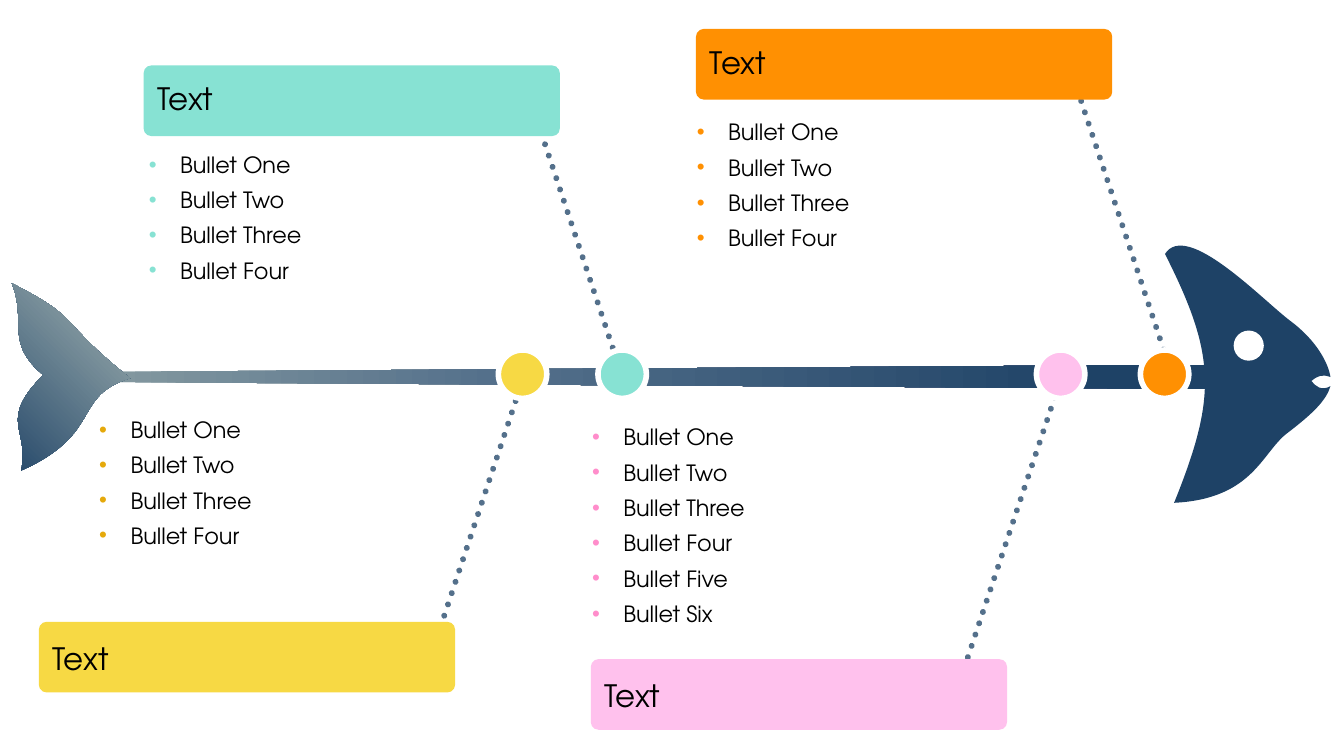
from math import cos, radians, sin

from copy import deepcopy
from lxml import etree
from pptx import Presentation
from pptx import util as u
from pptx.dml.color import RGBColor
from pptx.enum import dml, shapes, text
from pptx.oxml.ns import qn

FONT = "TeX Gyre Adventor"
NAVY, STEEL, GREY, WHITE = "1E4266", "54708B", "8499A0", "FFFFFF"
BANNER_W, BANNER_H = 10.49, 1.78
JOINT = 1.22
SEGMENT_TAGS = {2: "a:lnTo", 6: "a:cubicBezTo"}

prs = Presentation()
prs.slide_width, prs.slide_height = u.Cm(33.87), u.Cm(19.05)
slide = prs.slides.add_slide(prs.slide_layouts[6])
canvas = slide.shapes


def paint(shape, stops, angle=0, outline=None):
    """Fill with one hex colour, or with a gradient of (position, hex) stops."""
    shape.shadow.inherit = False
    if isinstance(stops, str):
        shape.fill.solid()
        shape.fill.fore_color.rgb = RGBColor.from_string(stops)
    else:
        shape.fill.gradient()
        shape.fill.gradient_angle = angle
        stop_list = shape._element.spPr.find(".//" + qn("a:gsLst"))
        while len(stop_list) < len(stops):
            stop_list.append(deepcopy(stop_list[0]))
        for stop, (position, color) in zip(shape.fill.gradient_stops, stops):
            stop.position = position
            stop.color.rgb = RGBColor.from_string(color)
    if outline:
        shape.line.color.rgb = RGBColor.from_string(outline)
        shape.line.width = u.Pt(4)
    else:
        shape.line.fill.background()


def write(lines, x, y, w, h, size, inset=None, bullet=None, after=0,
          anchor=text.MSO_ANCHOR.TOP):
    box = canvas.add_textbox(u.Cm(x), u.Cm(y), u.Cm(w), u.Cm(h))
    frame = box.text_frame
    frame.word_wrap = True
    frame.auto_size = text.MSO_AUTO_SIZE.SHAPE_TO_FIT_TEXT
    frame.vertical_anchor = anchor
    if inset is not None:
        frame.margin_left = frame.margin_right = u.Cm(inset)
        frame.margin_top = frame.margin_bottom = u.Cm(inset)
    frame.text = "\n".join(lines)
    for paragraph in frame.paragraphs:
        if bullet:
            props = paragraph._p.get_or_add_pPr()
            props.set("marL", str(u.Cm(0.79)))
            props.set("indent", str(-u.Cm(0.79)))
            color = etree.SubElement(props, qn("a:buClr"))
            etree.SubElement(color, qn("a:srgbClr"), val=bullet)
            etree.SubElement(props, qn("a:buFont"), typeface="Arial")
            etree.SubElement(props, qn("a:buChar"), char="•")
            paragraph.space_after = u.Pt(after)
        for run in paragraph.runs:
            run.font.name = FONT
            run.font.size = u.Pt(size)
            run.font.color.rgb = RGBColor.from_string("000000")


# Dotted ribs
for x1, y1, x2, y2 in [
    (11.1, 15.8, 13.13, 9.7),
    (13.64, 3.35, 15.67, 9.45),
    (24.39, 16.56, 26.64, 9.83),
    (27.15, 2.26, 29.46, 9.22),
]:
    rib = canvas.add_connector(shapes.MSO_CONNECTOR.STRAIGHT,
                               u.Cm(x1), u.Cm(y1), u.Cm(x2), u.Cm(y2))
    rib.line.color.rgb = RGBColor.from_string(STEEL)
    rib.line.width = u.Pt(4.25)
    rib.line.dash_style = dml.MSO_LINE.ROUND_DOT
    rib._element.spPr.find(qn("a:ln")).set("cap", "rnd")
    etree.SubElement(rib._element.spPr, qn("a:effectLst"))

# Fish outlines: a start, then lines (one point) or Bézier curves (three points)
spine = [
    (2.57, 9.5),
    (2.59, 9.45, 2.84, 9.37, 3.02, 9.37),
    (30.45, 9.19),
    (30.63, 9.19, 30.76, 9.35, 30.76, 9.5),
    (30.76, 9.5),
    (30.76, 9.68, 30.63, 9.8, 30.45, 9.8),
    (2.92, 9.63),
    (2.74, 9.63, 2.57, 9.55, 2.57, 9.5),
]
head = [
    (33.05, 9.6),
    (33.15, 9.73, 33.3, 9.86, 33.53, 9.73),
    (33.43, 10.08, 33.1, 10.41, 32.46, 10.9),
    (31.8, 11.38, 31.6, 12.57, 29.59, 12.67),
    (30.66, 10.01, 30.66, 8.97, 29.36, 6.4),
    (29.9, 5.54, 31.8, 7.54, 32.51, 8.08),
    (33.2, 8.59, 33.48, 9.17, 33.53, 9.5),
    (33.32, 9.42, 33.2, 9.47, 33.05, 9.6),
]
tail = [
    (3.28, 9.53),
    (1.8, 9.98, 2.62, 10.92, 0.53, 11.86),
    (0.76, 10.8, -0.08, 10.62, 1.09, 9.45),
    (0.1, 8.61, 0.69, 8.15, 0.3, 7.14),
    (2.13, 8.08, 1.35, 7.98, 3.28, 9.53),
]
fish = []
for outline, (x, y, w, h), turn, fill, angle in [
    (spine, (2.57, 9.19, 28.19, 0.61), 0, [(0, GREY), (0.35, STEEL), (0.89, NAVY)], 0),
    (tail, (-1.24, 7.67, 3.81, 3.61), 225, [(0.18, NAVY), (0.79, GREY)], 270),
    (head, (27.43, 6.78, 5.46, 5.36), 225, NAVY, 0),
]:
    builder = canvas.build_freeform(*outline[0], scale=u.Cm(1))
    builder.add_line_segments([segment[-2:] for segment in outline[1:]])
    part = builder.convert_to_shape()
    part.left, part.top, part.width, part.height = (u.Cm(side) for side in (x, y, w, h))
    part.rotation = turn
    path = part._element.spPr.find(".//" + qn("a:path"))
    path.set("w", str(part.width))
    path.set("h", str(part.height))
    for node in list(path):
        path.remove(node)
    cosine, sine = cos(radians(turn)), sin(radians(turn))
    for index, segment in enumerate(outline):
        tag = SEGMENT_TAGS[len(segment)] if index else "a:moveTo"
        node = etree.SubElement(path, qn(tag))
        for px, py in zip(segment[::2], segment[1::2]):
            # Turn each point back into the frame's own axes
            dx, dy = px - x - w / 2, py - y - h / 2
            etree.SubElement(node, qn("a:pt"),
                             x=str(int(u.Cm(w / 2 + dx * cosine + dy * sine))),
                             y=str(int(u.Cm(h / 2 - dx * sine + dy * cosine))))
    etree.SubElement(path, qn("a:close"))
    paint(part, fill, angle)
    fish.append(part)

eye = canvas.add_shape(shapes.MSO_SHAPE.OVAL, u.Cm(31.09), u.Cm(8.33), u.Cm(0.76), u.Cm(0.76))
paint(eye, WHITE)
canvas.add_group_shape([fish[-1], eye])

# Causes: color, bullet color, banner x and y, label drop, joint x, list x and y, items
four = ["Bullet One", "Bullet Two", "Bullet Three", "Bullet Four"]
six = four + ["Bullet Five", "Bullet Six"]
causes = [
    ("87E2D3", "87E2D3", 3.62, 1.65, 0.36, 15.07, 3.5, 3.68, four),
    ("F7D944", "E5A90B", 0.98, 15.67, 0.44, 12.56, 2.25, 10.36, four),
    ("FF9002", "FF9002", 17.54, 0.73, 0.36, 28.74, 17.31, 2.86, four),
    ("FFC1ED", "FF8DCB", 14.89, 16.61, 0.43, 26.12, 14.67, 10.55, six),
]
for color, dot, x, y, drop, joint_x, list_x, list_y, items in causes:
    banner = canvas.add_shape(shapes.MSO_SHAPE.ROUNDED_RECTANGLE,
                              u.Cm(x), u.Cm(y), u.Cm(BANNER_W), u.Cm(BANNER_H))
    banner.adjustments[0] = 0.11
    paint(banner, color)
    write(["Text"], x + 0.34, y + drop, 10.01, 0.94, 22, inset=0,
          anchor=text.MSO_ANCHOR.MIDDLE)
    joint = canvas.add_shape(shapes.MSO_SHAPE.OVAL,
                             u.Cm(joint_x), u.Cm(8.82), u.Cm(JOINT), u.Cm(JOINT))
    paint(joint, color, outline=WHITE)
    write(items, list_x, list_y, 10.67, 0.91 * len(items), 16, bullet=dot, after=6)

prs.save("out.pptx")
